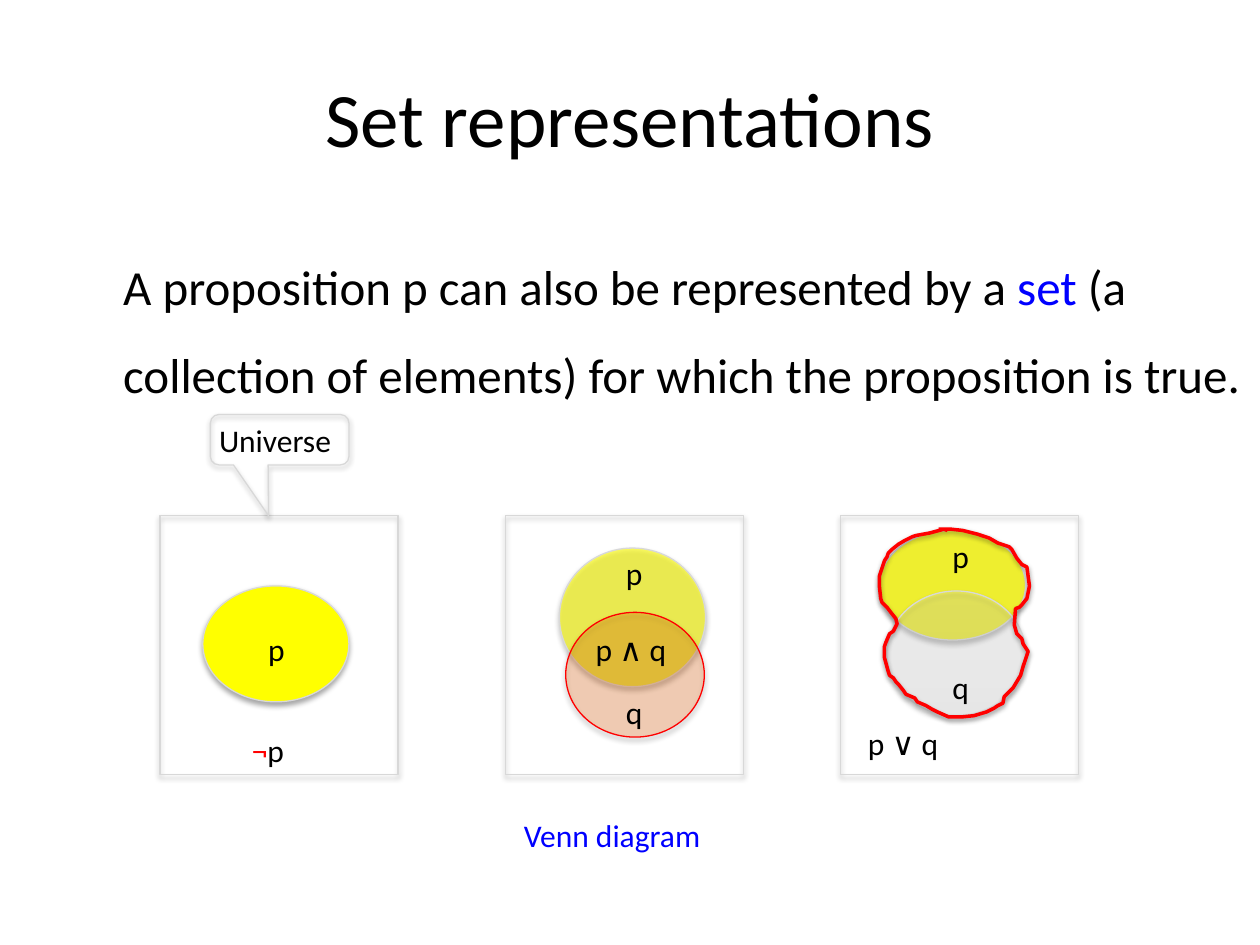
from typing import NamedTuple

from lxml import etree
from pptx import Presentation
from pptx.dml.color import RGBColor
from pptx.enum import shapes, text
from pptx.oxml.ns import qn
from pptx.util import Inches, Pt

FONT = "Calibri"
COLORS = {
    "ink": "000000",
    "accent": "0000FF",
    "red": "FF0000",
    "frame": "D8D8D8",
    "yellow": "FFFF00",
    "orange": "FF6600",
    "grey_dark": "DDDDDD",
    "grey_light": "EFEFEF",
}


class Oval(NamedTuple):
    left: float
    top: float
    width: float
    height: float
    fills: tuple[str, ...]  # two names make a vertical gradient
    opacity: int = 100
    line: str = "frame"


class Label(NamedTuple):
    left: float
    top: float
    width: float
    runs: tuple[tuple[str, str], ...]


FRAME_LEFTS = (1.27, 4.01, 6.67)
FRAME_TOP, FRAME_WIDTH, FRAME_HEIGHT = 4.09, 1.89, 2.06
LABEL_HEIGHT = 0.4
UNIVERSE = (1.67, 3.29, 1.1, LABEL_HEIGHT)

OVALS = (
    Oval(1.61, 4.65, 1.16, 0.92, ("yellow",)),
    Oval(4.44, 4.35, 1.16, 1.1, ("yellow",), 60),
    Oval(6.98, 4.21, 1.16, 0.87, ("yellow",), 75),
    Oval(4.49, 4.86, 1.1, 0.99, ("orange",), 24, "red"),
    Oval(7.04, 4.69, 1.1, 0.99, ("grey_dark", "grey_light"), 24),
)

LABELS = (
    Label(1.9, 5.75, 0.46, (("¬", "red"), ("p", "ink"))),
    Label(1.64, 3.29, 1.1, (("Universe", "ink"),)),
    Label(2.03, 4.95, 0.33, (("p", "ink"),)),
    Label(4.87, 4.35, 0.33, (("p", "ink"),)),
    Label(4.87, 5.45, 0.33, (("q", "ink"),)),
    Label(4.63, 4.95, 0.83, (("p ∧ q", "ink"),)),
    Label(6.79, 5.7, 0.83, (("p ∨ q", "ink"),)),
    Label(7.46, 4.21, 0.33, (("p", "ink"),)),
    Label(7.46, 5.25, 0.33, (("q", "ink"),)),
    Label(4.06, 6.43, 1.84, (("Venn diagram", "accent"),)),
)

# Hand-drawn outline of the union, in hundredths of an inch
UNION_OUTLINE = (
    (752, 421), (749, 420), (738, 423), (727, 425), (724, 426), (718, 429),
    (713, 432), (708, 436), (705, 439), (704, 442), (702, 445), (700, 451),
    (699, 454), (698, 457), (698, 466), (699, 475), (700, 478), (704, 482),
    (707, 486), (711, 491), (712, 495), (709, 501), (706, 503), (703, 510),
    (702, 513), (702, 522), (705, 533), (706, 536), (709, 538), (711, 541),
    (713, 543), (717, 548), (719, 551), (726, 554), (728, 557), (735, 560),
    (740, 563), (744, 565), (753, 569), (763, 569), (773, 568), (783, 565),
    (789, 562), (792, 560), (796, 558), (797, 553), (804, 546), (810, 536),
    (812, 529), (813, 526), (816, 517), (812, 511), (811, 507), (807, 503),
    (805, 496), (806, 483), (809, 482), (811, 480), (815, 475), (817, 465),
    (815, 450), (811, 448), (807, 443), (803, 436), (801, 434), (795, 432),
    (792, 431), (785, 427), (779, 425), (776, 424), (772, 423), (764, 421),
    (755, 420), (745, 420),
)


def rgb(name: str) -> RGBColor:
    return RGBColor.from_string(COLORS[name])


def set_outline(shape, color: str, points: float = 0.75) -> None:
    shape.line.color.rgb = rgb(color)
    shape.line.width = Pt(points)


def add_shadow(shape, opacity: int = 35, distance: float = 1.8) -> None:
    """Give the shape a soft black shadow straight below it."""
    shape.shadow.inherit = False
    effects = shape._element.spPr.find(qn("a:effectLst"))
    shadow = etree.SubElement(
        effects, qn("a:outerShdw"), blurRad=str(Pt(3.1)),
        dist=str(Pt(distance)), dir="5400000", rotWithShape="0")
    black = etree.SubElement(shadow, qn("a:srgbClr"), val=COLORS["ink"])
    etree.SubElement(black, qn("a:alpha"), val=str(opacity * 1000))


def add_hollow(slide, kind, box: tuple[float, ...]):
    shape = slide.shapes.add_shape(kind, *map(Inches, box))
    shape.fill.background()
    set_outline(shape, "frame")
    add_shadow(shape)
    return shape


def add_oval(slide, oval: Oval) -> None:
    shape = slide.shapes.add_shape(
        shapes.MSO_SHAPE.OVAL, *map(Inches, oval[:4]))
    if len(oval.fills) > 1:
        shape.fill.gradient()
        shape.fill.gradient_angle = 90
        for stop, name in zip(shape.fill.gradient_stops, oval.fills):
            stop.color.rgb = rgb(name)
    else:
        shape.fill.solid()
        shape.fill.fore_color.rgb = rgb(oval.fills[0])
    if oval.opacity < 100:
        for color in list(shape._element.spPr.iter(qn("a:srgbClr"))):
            etree.SubElement(color, qn("a:alpha"), val=str(oval.opacity * 1000))
    set_outline(shape, oval.line)
    add_shadow(shape)


def add_union_outline(slide) -> None:
    builder = slide.shapes.build_freeform(
        *UNION_OUTLINE[0], scale=Inches(0.01))
    builder.add_line_segments(UNION_OUTLINE[1:], close=False)
    outline = builder.convert_to_shape()
    outline.fill.background()
    set_outline(outline, "red", 2)
    add_shadow(outline, 38, 1.6)


def write_runs(paragraph, runs: tuple[tuple[str, str], ...], size: int) -> None:
    paragraph.font.name = FONT
    paragraph.font.size = Pt(size)
    for words, color in runs:
        run = paragraph.add_run()
        run.text = words
        run.font.color.rgb = rgb(color)


def add_label(slide, label: Label) -> None:
    frame = slide.shapes.add_textbox(
        *map(Inches, (*label[:3], LABEL_HEIGHT))).text_frame
    frame.word_wrap = False
    frame.auto_size = text.MSO_AUTO_SIZE.SHAPE_TO_FIT_TEXT
    write_runs(frame.paragraphs[0], label.runs, 18)


def add_title(slide) -> None:
    title = slide.shapes.title
    title.left, title.top, title.width, title.height = map(
        Inches, (0.5, 0.3, 9, 1.25))
    title.text_frame.vertical_anchor = text.MSO_ANCHOR.MIDDLE
    heading = title.text_frame.paragraphs[0]
    heading.alignment = text.PP_ALIGN.CENTER
    write_runs(heading, (("Set representations", "ink"),), 44)


def add_definition(slide) -> None:
    frame = slide.shapes.add_textbox(
        *map(Inches, (0.5, 1.75, 9.5, 4.95))).text_frame
    frame.word_wrap = True
    definition = frame.paragraphs[0]
    definition.line_spacing = 1.5
    definition.space_before = Pt(5.6)
    definition._p.get_or_add_pPr().set("marL", str(Inches(0.38)))
    write_runs(definition, (
        ("A proposition p can also be represented by a ", "ink"),
        ("set", "accent"),
        (" (a collection of elements) for which the proposition is true.", "ink"),
    ), 28)


def main() -> None:
    deck = Presentation()
    deck.slide_width, deck.slide_height = Inches(10), Inches(7.5)
    slide = deck.slides.add_slide(deck.slide_layouts[5])
    add_title(slide)
    add_definition(slide)
    for left in FRAME_LEFTS:
        add_hollow(slide, shapes.MSO_SHAPE.RECTANGLE,
                   (left, FRAME_TOP, FRAME_WIDTH, FRAME_HEIGHT))
    callout = add_hollow(
        slide, shapes.MSO_SHAPE.ROUNDED_RECTANGULAR_CALLOUT, UNIVERSE)
    for index, value in enumerate((-0.08, 1.51, 0.17)):
        callout.adjustments[index] = value
    for oval in OVALS:
        add_oval(slide, oval)
    add_union_outline(slide)
    for label in LABELS:
        add_label(slide, label)
    deck.save("out.pptx")


if __name__ == "__main__":
    main()
